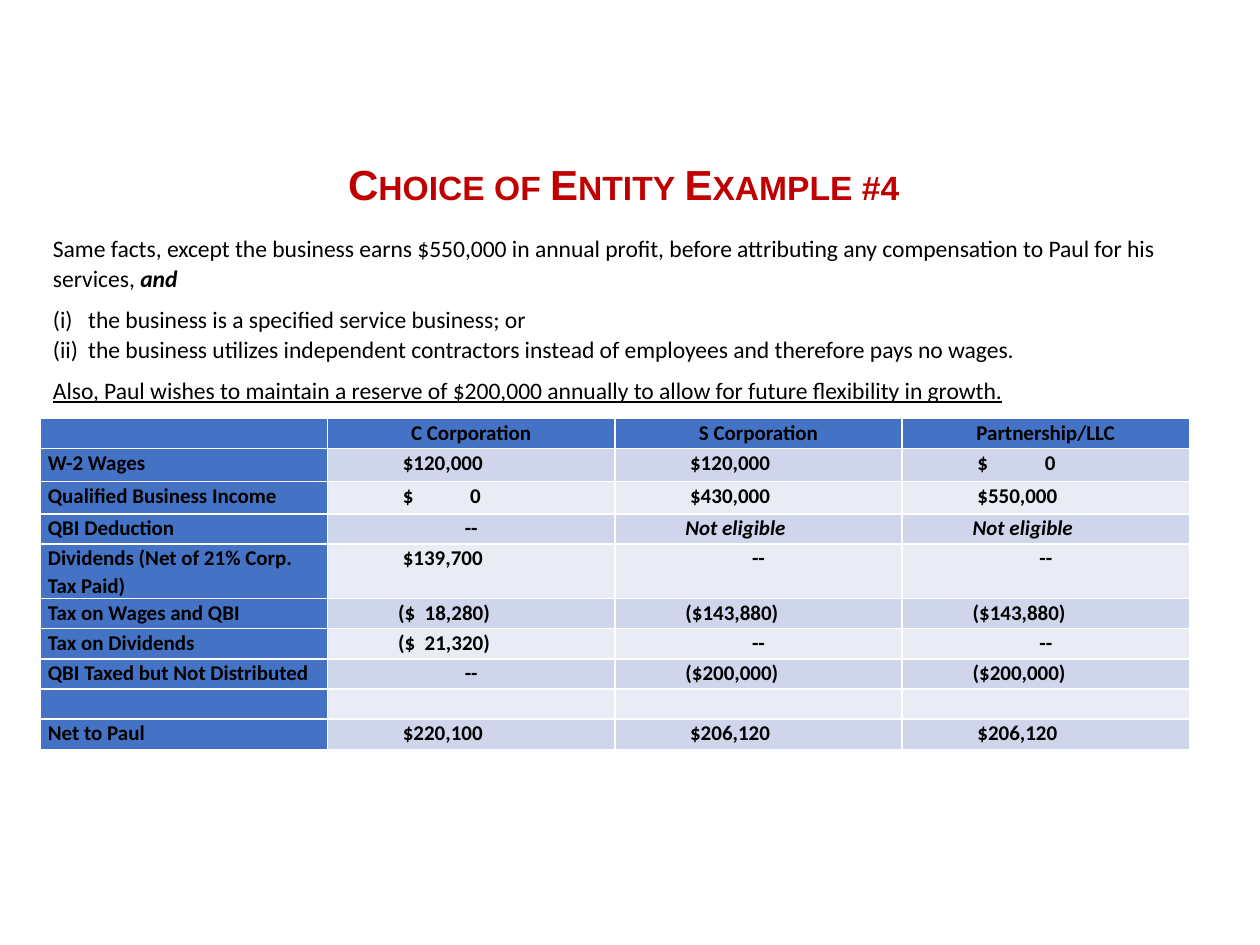
from lxml import etree
from pptx import Presentation
from pptx import util as u
from pptx.dml.color import RGBColor
from pptx.enum import text
from pptx.oxml import ns

RED, BLACK, WHITE = "C00000", "000000", "FFFFFF"
BLUE, BANDS = "4472C4", ("E9EBF5", "CFD5EA")
DASH = "--"
ZERO = "\t $            0"
ROWS = [
    ("", "C Corporation", "S Corporation", "Partnership/LLC"),
    ("W-2 Wages", "\t $120,000", "\t $120,000", ZERO),
    ("Qualified Business Income", ZERO, "\t $430,000", "\t $550,000"),
    ("QBI Deduction", DASH, "\tNot eligible", "\tNot eligible"),
    ("Dividends (Net of 21% Corp. Tax Paid)", "\t $139,700", DASH, DASH),
    ("Tax on Wages and QBI", "\t($  18,280)", "\t($143,880)", "\t($143,880)"),
    ("Tax on Dividends", "\t($  21,320)", DASH, DASH),
    ("QBI Taxed but Not Distributed", DASH, "\t($200,000)", "\t($200,000)"),
    ("", "", "", ""),
    ("Net to Paul", "\t $220,100", "\t $206,120", "\t $206,120"),
]
HEIGHTS = [0.24, 0.26, 0.26, 0.24, 0.43] + [0.24] * 5


def color(value):
    return RGBColor.from_string(value)


def add_element(parent, tag, **attributes):
    return etree.SubElement(parent, ns.qn(tag), attributes)


class SlideBuilder:
    """Holds the text style and the slide being built."""

    font = "Calibri"
    spacing = 1.07

    def __init__(self, slide):
        self.slide = slide

    def place(self, shape, left, top, width, height):
        shape.left, shape.top = u.Inches(left), u.Inches(top)
        shape.width, shape.height = u.Inches(width), u.Inches(height)

    def run(self, paragraph, words, size, fill=BLACK, name=None, **flags):
        run = paragraph.add_run()
        run.text = words
        run.font.name = name or self.font
        run.font.size = u.Pt(size)
        run.font.color.rgb = color(fill)
        for flag, value in flags.items():
            setattr(run.font, flag, value)
        return run

    def title(self, words, *box):
        shape = self.slide.shapes.title
        self.place(shape, *box)
        shape.text_frame.vertical_anchor = text.MSO_ANCHOR.MIDDLE
        paragraph = shape.text_frame.paragraphs[0]
        paragraph.alignment = text.PP_ALIGN.CENTER
        paragraph.line_spacing = 0.9
        run = self.run(paragraph, words, 24, RED, "Arial", bold=True)
        run.font._element.set("cap", "small")

    def body(self, items, *box):
        shape = self.slide.placeholders[1]
        self.place(shape, *box)
        frame = shape.text_frame
        frame.auto_size = text.MSO_AUTO_SIZE.SHAPE_TO_FIT_TEXT
        for index, (numbered, after, runs) in enumerate(items):
            paragraph = frame.add_paragraph() if index else frame.paragraphs[0]
            paragraph.line_spacing = self.spacing
            paragraph.space_before, paragraph.space_after = u.Pt(0), u.Pt(after)
            properties = paragraph._p.get_or_add_pPr()
            indent = u.Inches(0.28) if numbered else 0
            properties.set("marL", str(indent))
            properties.set("indent", str(-indent))
            if numbered:
                add_element(properties, "a:buFont", typeface="+mj-lt")
                add_element(properties, "a:buAutoNum", type="romanLcParenBoth")
            else:
                add_element(properties, "a:buNone")
            for words, flags in runs:
                self.run(paragraph, words, 13.5, **flags)

    def cell(self, cell, words, fill, centered):
        cell.margin_left = cell.margin_right = u.Inches(0.06)
        cell.margin_top = cell.margin_bottom = 0
        properties = cell._tc.get_or_add_tcPr()
        for side in "LRTB":
            line = add_element(properties, f"a:ln{side}", w=str(u.Pt(1)))
            solid = add_element(line, "a:solidFill")
            add_element(solid, "a:srgbClr", val=WHITE)
        cell.fill.solid()
        cell.fill.fore_color.rgb = color(fill)
        paragraph = cell.text_frame.paragraphs[0]
        paragraph.line_spacing = self.spacing
        if centered:
            paragraph.alignment = text.PP_ALIGN.CENTER
        if words:
            self.run(paragraph, words, 12, bold=True, italic=words.endswith("eligible"))
        else:
            add_element(paragraph._p, "a:endParaRPr", sz="1200")

    def table(self, rows, heights, *box):
        lengths = [u.Inches(length) for length in box]
        table = self.slide.shapes.add_table(len(rows), len(rows[0]), *lengths).table
        for row, height in zip(table.rows, heights):
            row.height = u.Inches(height)
        for r, values in enumerate(rows):
            for c, words in enumerate(values):
                fill = BLUE if r == 0 or c == 0 else BANDS[r % 2]
                self.cell(table.cell(r, c), words, fill, r == 0 or words == DASH)


def main():
    presentation = Presentation()
    presentation.slide_width, presentation.slide_height = u.Inches(10), u.Inches(7.5)
    builder = SlideBuilder(presentation.slides.add_slide(presentation.slide_layouts[1]))
    builder.title("Choice of Entity Example #4", 0.64, 0.94, 8.62, 1.09)
    builder.body([
        (False, 6, [
            ("Same facts, except the business earns $550,000 in annual profit, before "
             "attributing any compensation to Paul for his services, ", {}),
            ("and", {"bold": True, "italic": True})]),
        (True, 0, [("the business is a specified service business; or", {})]),
        (True, 6, [("the business utilizes independent contractors instead of employees "
                    "and therefore pays no wages.", {})]),
        (False, 6, [("Also, Paul wishes to maintain a reserve of $200,000 annually to "
                     "allow for future flexibility in growth.", {"underline": True})]),
    ], 0.32, 1.79, 9.38, 1.48)
    builder.table(ROWS, HEIGHTS, 0.32, 3.32, 9.12, 2.63)
    presentation.save("out.pptx")


if __name__ == "__main__":
    main()
